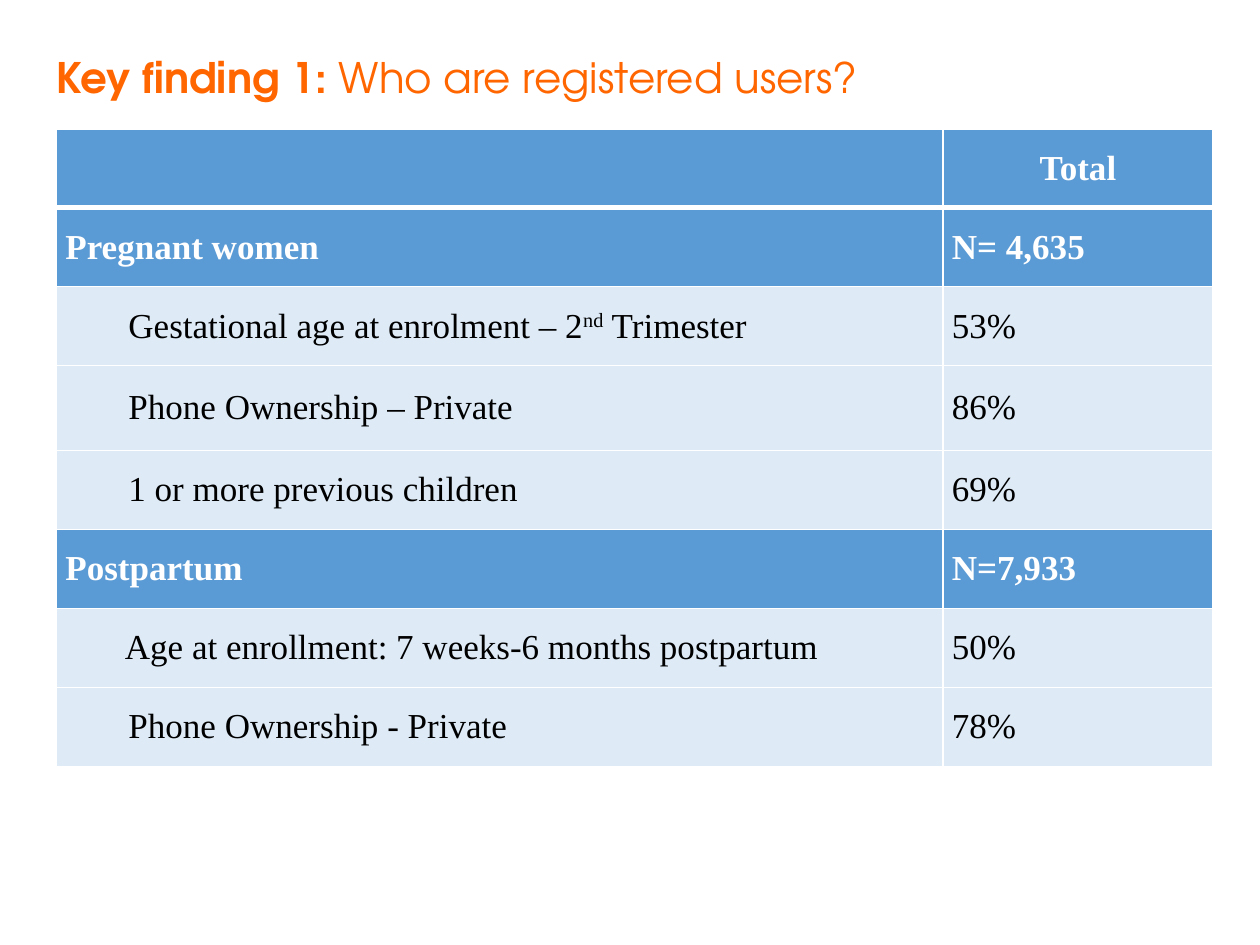
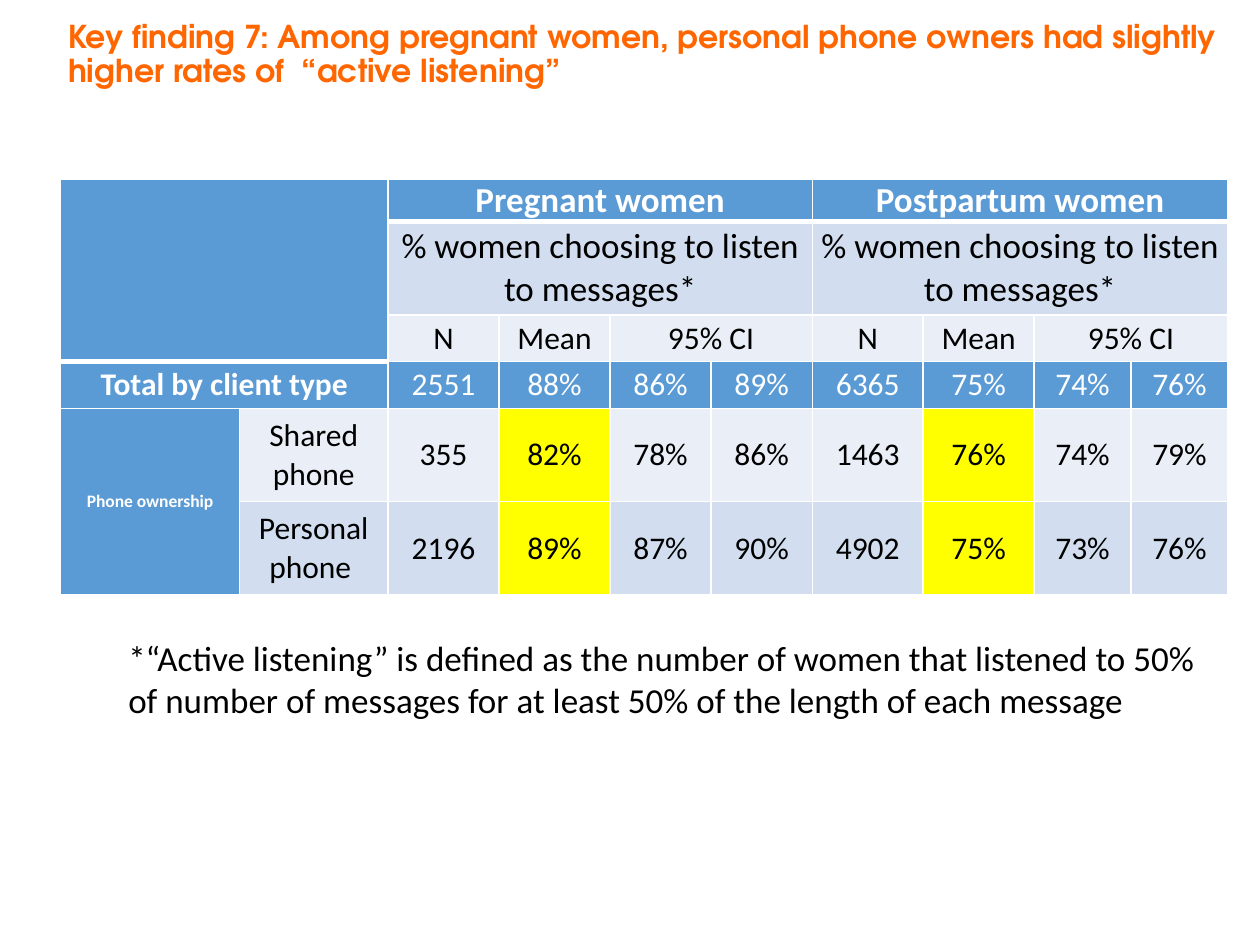
from lxml import etree
from pptx import Presentation
from pptx.dml.color import RGBColor
from pptx.enum.text import MSO_ANCHOR, MSO_AUTO_SIZE, PP_ALIGN
from pptx.oxml.ns import qn
from pptx.util import Pt

ORANGE = RGBColor(0xFF, 0x66, 0x00)
BLUE = RGBColor(0x5B, 0x9B, 0xD5)
PALE_BLUE = RGBColor(0xDE, 0xEB, 0xF7)
BAND_DARK = RGBColor(0xD2, 0xDE, 0xEF)
BAND_LIGHT = RGBColor(0xEA, 0xEF, 0xF7)
YELLOW = RGBColor(0xFF, 0xFF, 0x00)
WHITE = RGBColor(0xFF, 0xFF, 0xFF)
BLACK = RGBColor(0x00, 0x00, 0x00)
TITLE_FONT = "TeX Gyre Adventor"
THIN, THICK = 1, 3

presentation = Presentation()
presentation.slide_width = Pt(720)
presentation.slide_height = Pt(540)


def add_titled_slide(title_runs, size, left, top, width, height):
    slide = presentation.slides.add_slide(presentation.slide_layouts[5])
    title = slide.shapes.title
    title.left, title.top, title.width, title.height = Pt(left), Pt(top), Pt(width), Pt(height)
    frame = title.text_frame
    frame.auto_size = MSO_AUTO_SIZE.NONE
    frame.vertical_anchor = MSO_ANCHOR.MIDDLE
    paragraph = frame.paragraphs[0]
    paragraph.alignment = PP_ALIGN.LEFT
    paragraph.line_spacing = 0.9
    for text, bold in title_runs:
        run = paragraph.add_run()
        run.text = text
        run.font.name = TITLE_FONT
        run.font.size = Pt(size)
        run.font.bold = bold
        run.font.color.rgb = ORANGE
    return slide


def style_cell(cell, fill, font, size, color, bold, align, top=THIN, bottom=THIN):
    cell.margin_left = cell.margin_right = Pt(5)
    cell.margin_top = cell.margin_bottom = 0
    cell.vertical_anchor = MSO_ANCHOR.MIDDLE
    properties = cell._tc.get_or_add_tcPr()
    for side, weight in (("L", THIN), ("R", THIN), ("T", top), ("B", bottom)):
        line = etree.SubElement(properties, qn(f"a:ln{side}"), w=str(Pt(weight)))
        solid = etree.SubElement(line, qn("a:solidFill"))
        etree.SubElement(solid, qn("a:srgbClr"), val=str(WHITE))
    cell.fill.solid()
    cell.fill.fore_color.rgb = fill
    paragraph = cell.text_frame.paragraphs[0]
    paragraph.alignment = align
    paragraph.font.name = font
    paragraph.font.size = Pt(size)
    paragraph.font.bold = bold
    paragraph.font.color.rgb = color


users_slide = add_titled_slide(
    [("Key finding 1: ", True), ("Who are registered users?", False)], 24, 25.2, 16.56, 620.64, 58.32)

user_rows = [
    ("", "Total", None),
    ("Pregnant women", "N= 4,635", None),
    ("Gestational age at enrolment – 2|nd| Trimester", "53%", 36),
    ("Phone Ownership – Private", "86%", 36),
    ("1 or more previous children", "69%", 36),
    ("Postpartum", "N=7,933", None),
    ("Age at enrollment: 7 weeks-6 months postpartum", "50%", 34),
    ("Phone Ownership - Private", "78%", 36),
]
users = users_slide.shapes.add_table(
    len(user_rows), 2, Pt(32.4), Pt(73.6), Pt(660.6), Pt(364.5)).table
users.first_row = users.horz_banding = False
for column, width in zip(users.columns, (506.6, 154)):
    column.width = Pt(width)
for index, (label, value, indent) in enumerate(user_rows):
    users.rows[index].height = Pt(48.4 if index == 3 else 45.15)
    heading = indent is None
    for column, text in enumerate((label, value)):
        cell = users.cell(index, column)
        paragraph = cell.text_frame.paragraphs[0]
        for part, piece in enumerate(text.split("|")):
            run = paragraph.add_run()
            run.text = piece
            if part == 1:
                run._r.get_or_add_rPr().set("baseline", "30000")
        if indent and column == 0:
            paragraph._p.get_or_add_pPr().set("marL", str(Pt(indent)))
        style_cell(cell, BLUE if heading else PALE_BLUE, "Times New Roman", 20,
                   WHITE if heading else BLACK, heading,
                   PP_ALIGN.CENTER if index == 0 else PP_ALIGN.LEFT,
                   top=THICK if index == 1 else THIN,
                   bottom=THICK if index == 0 else THIN)

listening_slide = add_titled_slide(
    [("Key finding 7: Among pregnant women, personal phone owners had slightly "
      "higher rates of  “active listening”", True)], 18, 31.7, 14.4, 688.3, 34.56)

question = "% women choosing to listen to messages*"
measures = ["N", "Mean", "95% CI", ""]
listening_rows = [
    ["", "", "Pregnant women", "", "", "", "Postpartum women", "", "", ""],
    ["", "", question, "", "", "", question, "", "", ""],
    ["", "", *measures, *measures],
    ["Total by client type", "", "2551", "88%", "86%", "89%", "6365", "75%", "74%", "76%"],
    ["Phone ownership", "Shared phone", "355", "82%", "78%", "86%", "1463", "76%", "74%", "79%"],
    ["", "Personal phone ", "2196", "89%", "87%", "90%", "4902", "75%", "73%", "76%"],
]
row_fills = [BLUE, BAND_DARK, BAND_LIGHT, BLUE, BAND_LIGHT, BAND_DARK]
row_heights = [24, 53.3, 26.7, 26.7, 53.3, 53.3]
column_widths = [102.2, 85, 63.4, 63.4, 57.8, 57.8, 63.4, 63.4, 55.4, 55.4]
listening = listening_slide.shapes.add_table(
    len(listening_rows), len(column_widths), Pt(34.6), Pt(102.2),
    Pt(sum(column_widths)), Pt(sum(row_heights))).table
listening.first_row = listening.horz_banding = False
for column, width in zip(listening.columns, column_widths):
    column.width = Pt(width)
for row, values in enumerate(listening_rows):
    listening.rows[row].height = Pt(row_heights[row])
    for column, text in enumerate(values):
        cell = listening.cell(row, column)
        cell.text = text
        corner = row < 3 and column < 2
        side_label = row >= 4 and column == 0
        fill = BLUE if corner or side_label else row_fills[row]
        if row >= 4 and column in (3, 7):
            fill = YELLOW
        size = 10 if side_label else 20 if row < 2 else 18
        header_end = 2 if column < 2 else 0
        style_cell(cell, fill, "Calibri", size, WHITE if fill == BLUE else BLACK,
                   row == 0 or (row >= 3 and column == 0), PP_ALIGN.CENTER,
                   top=THICK if row == header_end + 1 else THIN,
                   bottom=THICK if row == header_end or corner else THIN)

merges = [((0, 0), (2, 1)), ((3, 0), (3, 1)), ((4, 0), (5, 0))]
for first in (2, 6):
    merges += [((0, first), (0, first + 3)), ((1, first), (1, first + 3)),
               ((2, first + 2), (2, first + 3))]
for start, end in merges:
    listening.cell(*start).merge(listening.cell(*end))

note = listening_slide.shapes.add_textbox(Pt(66.24), Pt(360), Pt(624.24), Pt(55.44))
note.text_frame.word_wrap = True
note.text_frame.auto_size = MSO_AUTO_SIZE.SHAPE_TO_FIT_TEXT
paragraph = note.text_frame.paragraphs[0]
paragraph.text = ("*“Active listening” is defined as the number of women that listened to 50% "
                  "of number of messages for at least 50% of the length of each message")
paragraph.font.name = "Calibri"
paragraph.font.size = Pt(20)
paragraph.font.color.rgb = BLACK

presentation.save("out.pptx")
